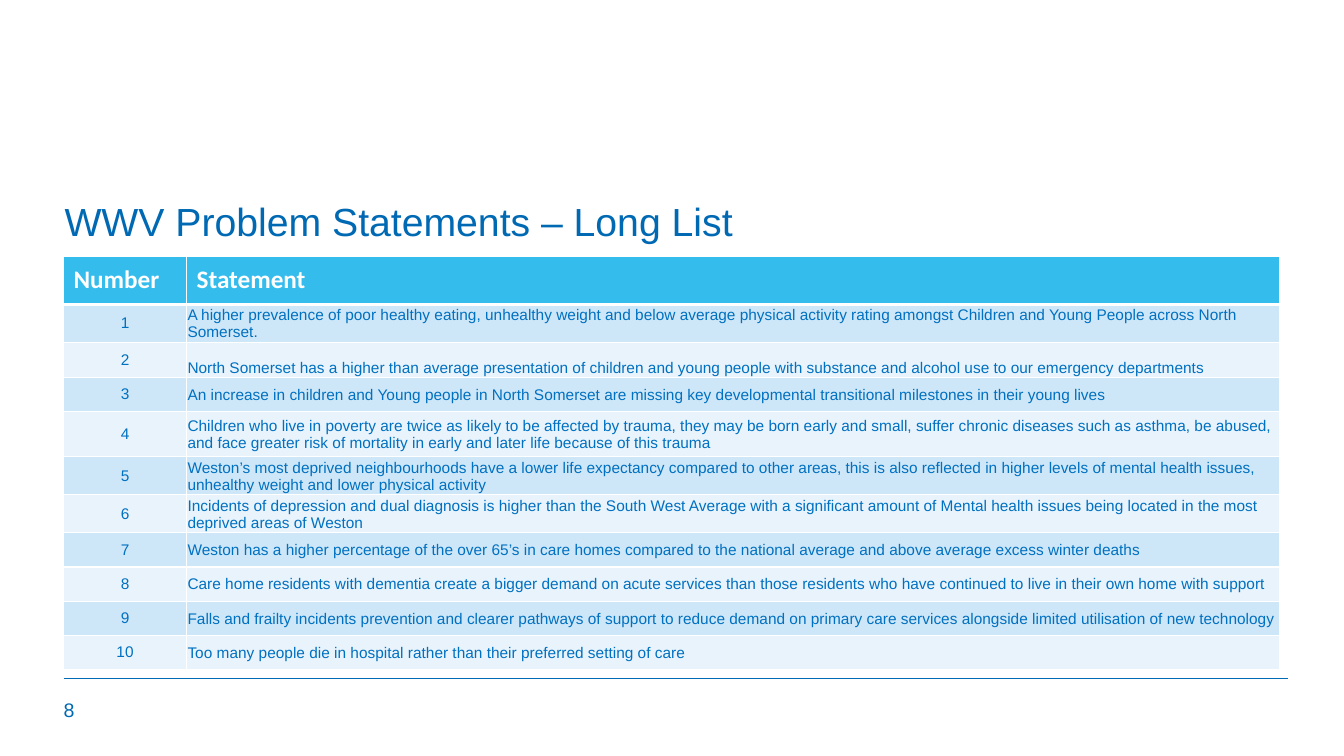
from dataclasses import dataclass

from lxml import etree
from pptx import Presentation
from pptx.dml.color import RGBColor
from pptx.enum.shapes import MSO_CONNECTOR
from pptx.enum.text import MSO_ANCHOR, PP_ALIGN
from pptx.oxml.ns import qn
from pptx.util import Inches, Pt

STRAIGHT = MSO_CONNECTOR.STRAIGHT
TOP, MIDDLE, BOTTOM = MSO_ANCHOR.TOP, MSO_ANCHOR.MIDDLE, MSO_ANCHOR.BOTTOM
LEFT, CENTER = PP_ALIGN.LEFT, PP_ALIGN.CENTER
GRID_COLUMNS = GRID_ROWS = 100


@dataclass(frozen=True)
class TextStyle:
    size: float
    color: str
    name: str = "Arial"
    bold: bool = False


@dataclass(frozen=True)
class Theme:
    title: TextStyle = TextStyle(28, "0069B3")
    page_number: TextStyle = TextStyle(14, "0069B3")
    header: TextStyle = TextStyle(18, "FFFFFF", "Calibri", True)
    body: TextStyle = TextStyle(11, "0070C0")
    rule: str = "0069B3"
    border: str = "FFFFFF"
    header_fill: str = "34BCED"
    bands: tuple = ("CEE7F8", "E8F3FC")
    thin: float = 1
    thick: float = 3


STATEMENTS = [
    "A higher prevalence of poor healthy eating, unhealthy weight and below average physical activity rating "
    "amongst Children and Young People across North Somerset.",
    "North Somerset has a higher than average presentation of children and young people with substance and "
    "alcohol use to our emergency departments",
    "An increase in children and Young people in North Somerset are missing key developmental transitional "
    "milestones in their young lives",
    "Children who live in poverty are twice as likely to be affected by trauma, they may be born early and small, "
    "suffer chronic diseases such as asthma, be abused, and face greater risk of mortality in early and later "
    "life because of this trauma",
    "Weston’s most deprived neighbourhoods have a lower life expectancy compared to other areas, this is also "
    "reflected in higher levels of mental health issues, unhealthy weight and lower physical activity",
    "Incidents of depression and dual diagnosis is higher than the South West Average with a significant amount "
    "of Mental health issues being located in the most deprived areas of Weston",
    "Weston has a higher percentage of the over 65’s in care homes compared to the national average and above "
    "average excess winter deaths",
    "Care home residents with dementia create a bigger demand on acute services than those residents who have "
    "continued to live in their own home with support",
    "Falls and frailty incidents prevention and clearer pathways of support to reduce demand on primary care "
    "services alongside limited utilisation of new technology",
    "Too many people die in hospital rather than their preferred setting of care",
]
HEADER_HEIGHT, ROW_HEIGHT = 6.4, 4.53
SPECIAL_HEIGHTS = {2: 4.6, 4: 6}
BOTTOM_ANCHORED_ROW = 2


def assign(target, values):
    for name, value in values.items():
        setattr(target, name, value)


class SlideBuilder:
    def __init__(self, presentation, theme):
        self.theme = theme
        self.slide = presentation.slides.add_slide(presentation.slide_layouts[6])
        self.column = presentation.slide_width / GRID_COLUMNS
        self.row = presentation.slide_height / GRID_ROWS

    def across(self, columns):
        return round(columns * self.column)

    def down(self, rows):
        return round(rows * self.row)

    def place(self, left, top, width, height):
        return self.across(left), self.down(top), self.across(width), self.down(height)

    def fill_paragraph(self, paragraph, text, style, **paragraph_format):
        assign(paragraph, paragraph_format)
        run = paragraph.add_run()
        run.text = text
        assign(run.font, {"size": Pt(style.size), "name": style.name, "bold": style.bold})
        run.font.color.rgb = RGBColor.from_string(style.color)

    def text(self, text, style, area, **paragraph_format):
        frame = self.slide.shapes.add_textbox(*self.place(*area)).text_frame
        assign(frame, {"word_wrap": True, "vertical_anchor": TOP, "margin_left": 0,
                       "margin_right": 0, "margin_top": 0, "margin_bottom": 0})
        self.fill_paragraph(frame.paragraphs[0], text, style, **paragraph_format)

    def rule(self, left, right, top):
        connector = self.slide.shapes.add_connector(
            STRAIGHT, self.across(left), self.down(top), self.across(right), self.down(top))
        connector.line.color.rgb = RGBColor.from_string(self.theme.rule)
        connector.line.width = Pt(self.theme.thin)
        etree.SubElement(connector._element.spPr, qn("a:effectLst"))

    def borders(self, cell, widths):
        properties = cell._tc.get_or_add_tcPr()
        for side, width in widths.items():
            line = etree.SubElement(properties, qn(f"a:ln{side}"), w=str(Pt(width)))
            fill = etree.SubElement(line, qn("a:solidFill"))
            etree.SubElement(fill, qn("a:srgbClr"), val=self.theme.border)

    def cell(self, cell, text, style, fill, widths, cell_format, alignment):
        self.borders(cell, widths)
        cell.fill.solid()
        cell.fill.fore_color.rgb = RGBColor.from_string(fill)
        assign(cell, cell_format)
        self.fill_paragraph(cell.text_frame.paragraphs[0], text, style, alignment=alignment)

    def statement_table(self, left, top, column_widths, headings, statements):
        theme = self.theme
        heights = [HEADER_HEIGHT] + [SPECIAL_HEIGHTS.get(number, ROW_HEIGHT)
                                     for number in range(1, len(statements) + 1)]
        area = self.place(left, top, sum(column_widths), sum(heights))
        table = self.slide.shapes.add_table(len(heights), len(column_widths), *area).table
        table.horz_banding = False
        for column, width in zip(table.columns, column_widths):
            column.width = self.across(width)
        for row, height in zip(table.rows, heights):
            row.height = self.down(height)

        thin_sides = dict.fromkeys("LRTB", theme.thin)
        header_sides = {**thin_sides, "B": theme.thick}
        first_sides = {**thin_sides, "T": theme.thick}
        centered = {"vertical_anchor": MIDDLE}
        tight = {"margin_left": Inches(0.01), "margin_right": Inches(0.01),
                 "margin_top": Inches(0.01), "margin_bottom": 0}
        for index, heading in enumerate(headings):
            self.cell(table.cell(0, index), heading, theme.header, theme.header_fill,
                      header_sides, centered, LEFT)
        for number, statement in enumerate(statements, 1):
            fill = theme.bands[(number - 1) % len(theme.bands)]
            sides = first_sides if number == 1 else thin_sides
            anchor = BOTTOM if number == BOTTOM_ANCHORED_ROW else MIDDLE
            self.cell(table.cell(number, 0), str(number), theme.body, fill, sides, centered, CENTER)
            self.cell(table.cell(number, 1), statement, theme.body, fill, sides,
                      {**tight, "vertical_anchor": anchor}, LEFT)


def main():
    presentation = Presentation()
    assign(presentation, {"slide_width": Inches(13.33), "slide_height": Inches(7.5)})
    theme = Theme()
    builder = SlideBuilder(presentation, theme)
    builder.rule(4.73, 95.8, 89.73)
    builder.text("8", theme.page_number, (4.73, 92.27, 3.53, 5.33))
    builder.statement_table(4.73, 33.87, (9.15, 81.32), ("Number", "Statement"), STATEMENTS)
    builder.text("WWV Problem Statements – Long List", theme.title,
                 (4.8, 26.8, 82.37, 4.8), line_spacing=0.9)
    presentation.save("out.pptx")


if __name__ == "__main__":
    main()
